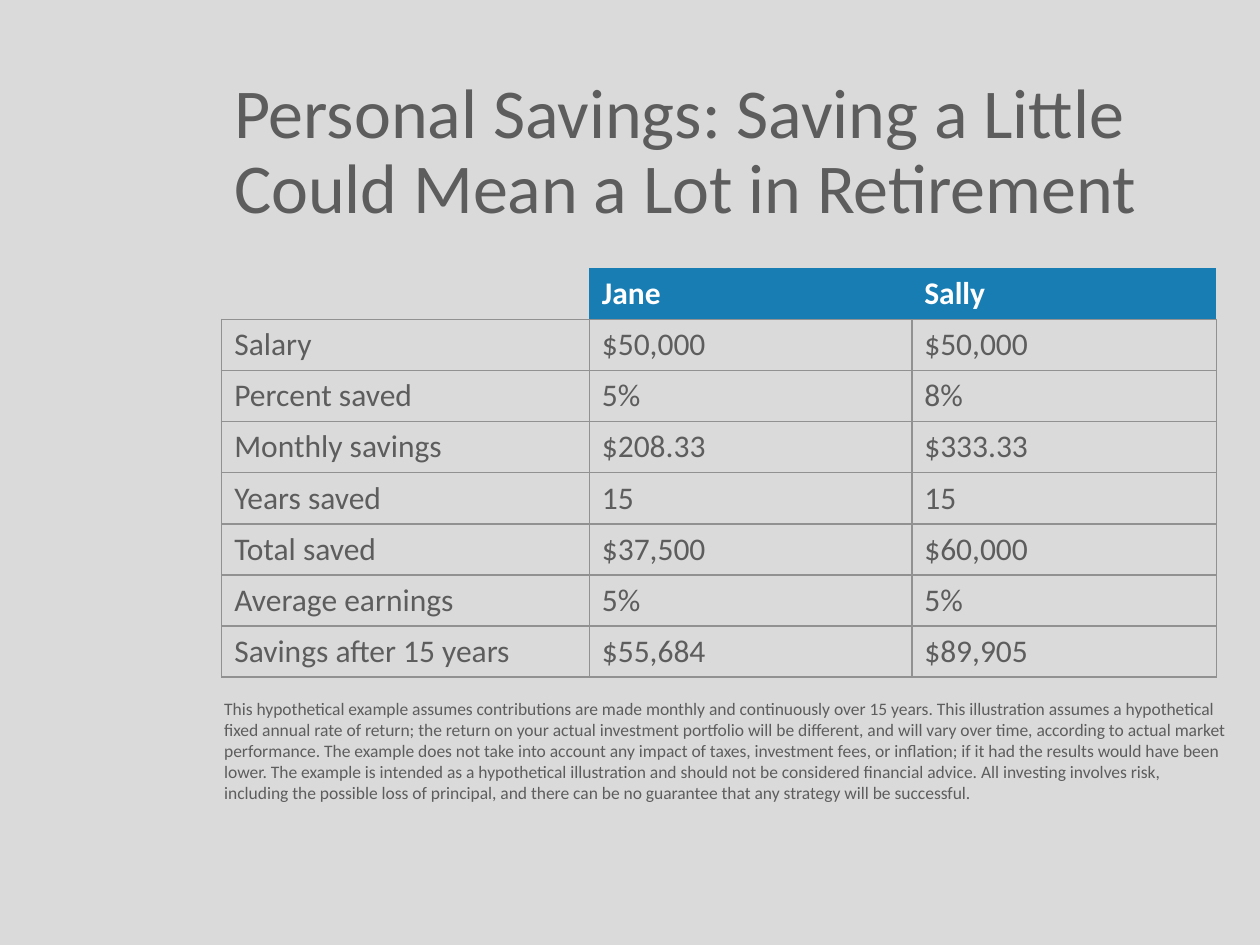
from typing import NamedTuple

from lxml.etree import SubElement
from pptx import Presentation
from pptx.dml.color import RGBColor
from pptx.enum.text import MSO_ANCHOR, MSO_AUTO_SIZE
from pptx.oxml.ns import qn
from pptx.util import Cm, Pt

BACKGROUND = RGBColor(0xDA, 0xDA, 0xDA)
GRAY = RGBColor(0x5D, 0x5D, 0x5D)
BORDER = RGBColor(0x91, 0x91, 0x91)
BLUE = RGBColor(0x17, 0x7D, 0xB3)
WHITE = RGBColor(0xFF, 0xFF, 0xFF)
FONT = "Calibri"
COLUMN_WIDTHS = (Cm(7.41), Cm(6.5), Cm(6.14))
ROW_HEIGHT = Cm(1.03)

TITLE = "Personal Savings: Saving a Little\vCould Mean a Lot in Retirement"
DISCLAIMER = (
    "This hypothetical example assumes contributions are made monthly and continuously "
    "over 15 years. This illustration assumes a hypothetical fixed annual rate of return; "
    "the return on your actual investment portfolio will be different, and will vary over "
    "time, according to actual market performance. The example does not take into account "
    "any impact of taxes, investment fees, or inflation; if it had the results would have "
    "been lower. The example is intended as a hypothetical illustration and should not be "
    "considered financial advice. All investing involves risk, including the possible loss "
    "of principal, and there can be no guarantee that any strategy will be successful."
)


class SavingsRow(NamedTuple):
    label: str
    jane: str
    sally: str


HEADER = SavingsRow("", "Jane", "Sally")
SAVINGS = (
    SavingsRow("Salary", "$50,000", "$50,000"),
    SavingsRow("Percent saved", "5%", "8%"),
    SavingsRow("Monthly savings", "$208.33", "$333.33"),
    SavingsRow("Years saved", "15", "15"),
    SavingsRow("Total saved", "$37,500", "$60,000"),
    SavingsRow("Average earnings", "5%", "5%"),
    SavingsRow("Savings after 15 years", "$55,684", "$89,905"),
)


def write_text(frame, text: str, *, size: float, color: RGBColor = GRAY,
               bold: bool = False, line_spacing: float | None = None) -> None:
    paragraph = frame.paragraphs[0]
    paragraph.text = text
    paragraph.line_spacing = line_spacing
    for font in (paragraph.font, *(run.font for run in paragraph.runs)):
        font.name = FONT
        font.size = Pt(size)
        font.bold = bold
        font.color.rgb = color


def add_text_box(slide, left: int, top: int, width: int, height: int):
    """Add a wrapping text box and return its text frame."""
    frame = slide.shapes.add_textbox(left, top, width, height).text_frame
    frame.word_wrap = True
    return frame


def set_borders(cell, drawn_sides: str) -> None:
    """Draw the sides named by the letters L, R, T and B; clear the others."""
    properties = cell._tc.get_or_add_tcPr()
    for side in "LRTB":
        line = SubElement(properties, qn(f"a:ln{side}"), w=str(Pt(1)))
        if side in drawn_sides:
            fill = SubElement(line, qn("a:solidFill"))
            SubElement(fill, qn("a:srgbClr"), val=str(BORDER))
        else:
            SubElement(line, qn("a:noFill"))


def add_savings_table(slide, left: int, top: int) -> None:
    rows = (HEADER, *SAVINGS)
    table = slide.shapes.add_table(
        len(rows), len(COLUMN_WIDTHS), left, top,
        sum(COLUMN_WIDTHS), ROW_HEIGHT * len(rows)).table
    table.first_row = table.horz_banding = False
    for column, width in zip(table.columns, COLUMN_WIDTHS):
        column.width = width
    for row_index, row in enumerate(rows):
        table.rows[row_index].height = ROW_HEIGHT
        is_header = row is HEADER
        for column_index, value in enumerate(row):
            cell = table.cell(row_index, column_index)
            set_borders(cell, "B" if is_header else "LRTB")
            if is_header and value:
                cell.fill.solid()
                cell.fill.fore_color.rgb = BLUE
            else:
                cell.fill.background()
            write_text(cell.text_frame, value, size=18, bold=is_header,
                       color=WHITE if is_header else GRAY)


def main() -> None:
    presentation = Presentation()
    presentation.slide_width, presentation.slide_height = Cm(25.4), Cm(19.05)
    slide = presentation.slides.add_slide(presentation.slide_layouts[6])
    slide.background.fill.solid()
    slide.background.fill.fore_color.rgb = BACKGROUND

    disclaimer = add_text_box(slide, Cm(4.27), Cm(13.94), Cm(20.73), Cm(2.39))
    disclaimer.auto_size = MSO_AUTO_SIZE.SHAPE_TO_FIT_TEXT
    write_text(disclaimer, DISCLAIMER, size=10)

    add_savings_table(slide, Cm(4.47), Cm(5.41))

    title = add_text_box(slide, Cm(4.47), Cm(1.4), Cm(20.29), Cm(3.38))
    title.vertical_anchor = MSO_ANCHOR.MIDDLE
    write_text(title, TITLE, size=40, line_spacing=0.9)

    presentation.save("out.pptx")


if __name__ == "__main__":
    main()
